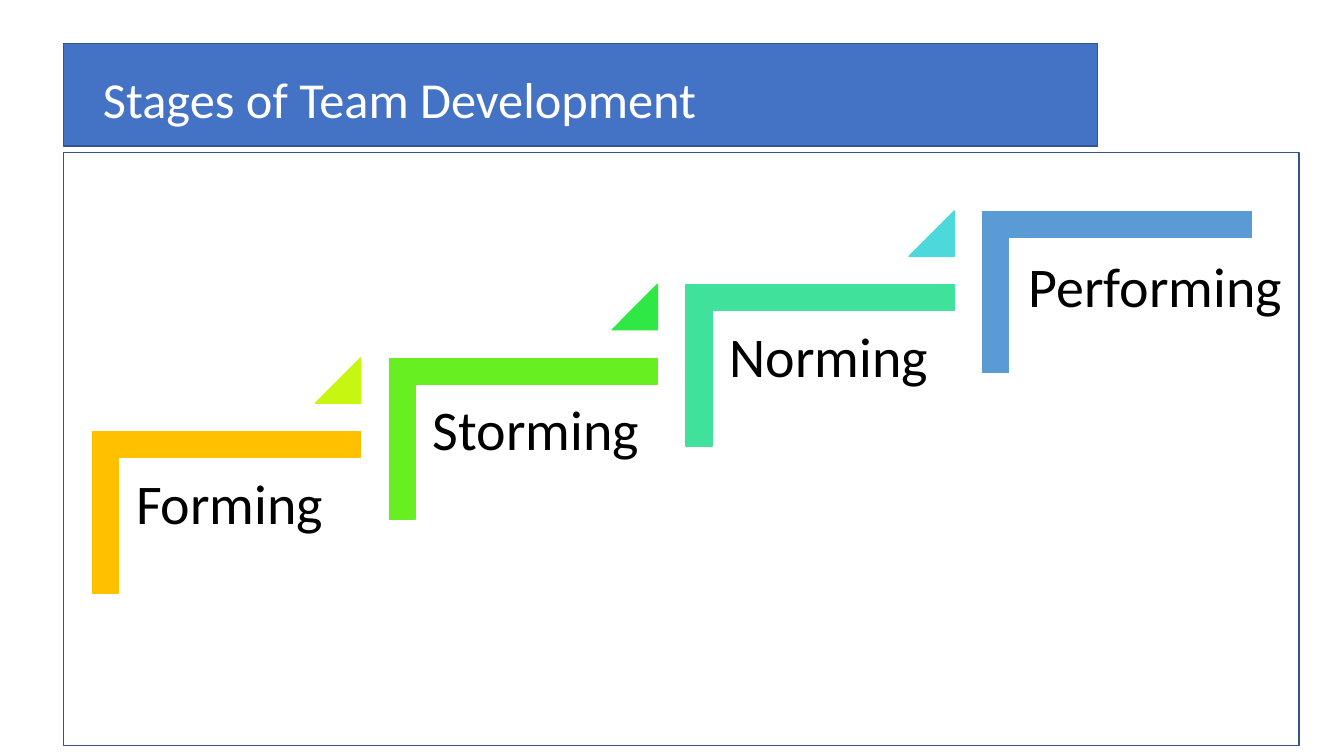
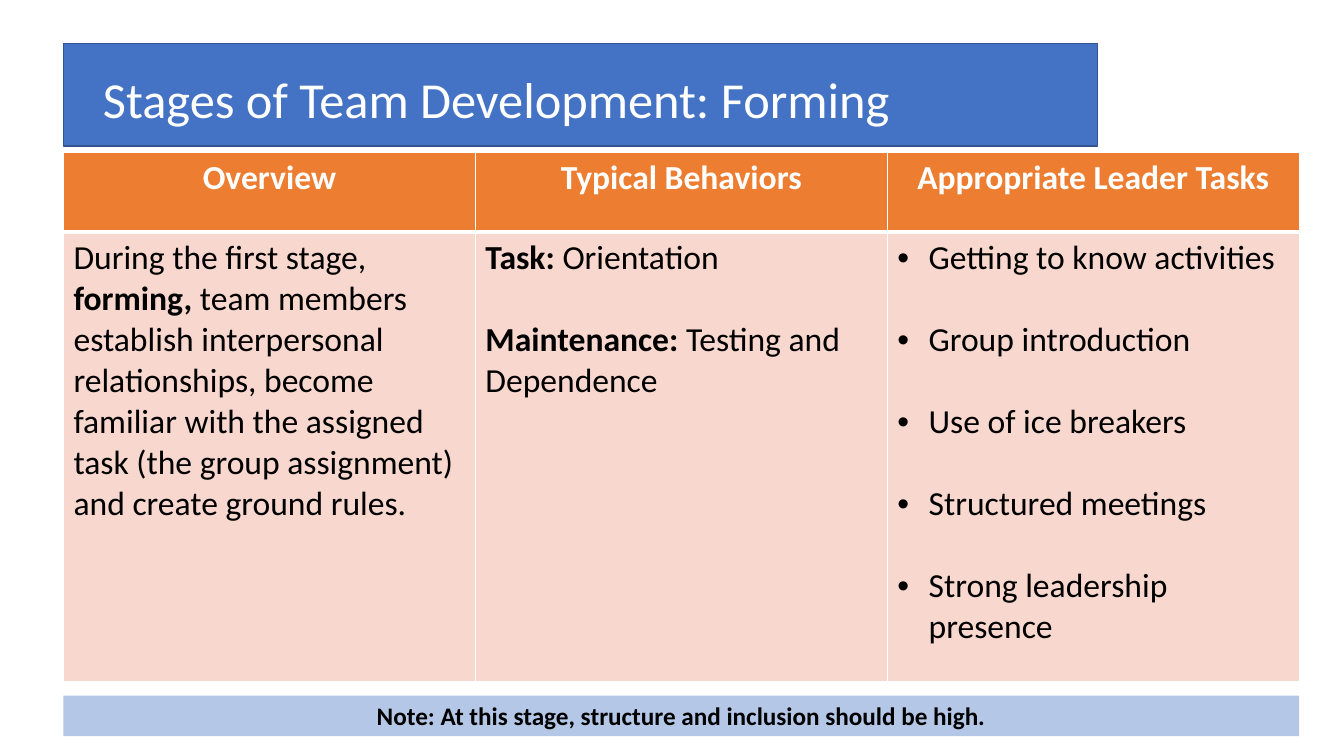
from lxml import etree
from pptx import Presentation
from pptx.dml.color import RGBColor
from pptx.enum.shapes import MSO_SHAPE
from pptx.enum.text import MSO_ANCHOR, MSO_AUTO_SIZE, PP_ALIGN
from pptx.oxml.ns import qn
from pptx.util import Cm, Pt

RECT, CORNER, TRIANGLE = MSO_SHAPE.RECTANGLE, MSO_SHAPE.CORNER, MSO_SHAPE.ISOSCELES_TRIANGLE
LEFT, CENTER = PP_ALIGN.LEFT, PP_ALIGN.CENTER
TOP, MIDDLE = MSO_ANCHOR.TOP, MSO_ANCHOR.MIDDLE
NO_FIT = MSO_AUTO_SIZE.NONE

FONT = "Calibri"
BLUE, BLUE_LINE, PALE_BLUE = "4472C4", "325491", "B4C7E7"
ORANGE, PALE_ORANGE = "ED7D31", "F8D7CE"
BLACK, WHITE = "000000", "FFFFFF"

# Shared layout, in centimetres
SLIDE_W, SLIDE_H = 33.87, 19.05
BODY_X, BODY_Y, BODY_W = 1.6, 3.84, 31.14
BAND = (BODY_X, 1.09, 26.06, 2.59)
TITLE = (2.34, 1.02, 29.21, 3.1)

STEPS_TITLE = "Stages of Team Development"
STEPS_H = 14.94
STEP_DX, STEP_DY = 7.48, -1.85
# Stage, corner colour, colour of the triangle leading to the next stage
STEPS = [
    ("Forming", "FFC000", "C7F711"),
    ("Storming", "67EF21", "30E845"),
    ("Norming", "3FE19B", "4DD8DB"),
    ("Performing", "5B9BD5", None),
]

FORMING_TITLE = "Stages of Team Development: Forming"
ROW_HEIGHTS = (2.01, 11.33)
# Each column: heading, bulleted or not, paragraphs of (text, bold) runs
COLUMNS = [
    ("Overview", False, [
        [("During the first stage, ", False), ("forming, ", True),
         ("team members establish interpersonal relationships, become familiar with "
          "the assigned task (the group assignment) and create ground rules.", False)],
    ]),
    ("Typical Behaviors", False, [
        [("Task: ", True), ("Orientation", False)],
        [("Maintenance: ", True), ("Testing and Dependence", False)],
    ]),
    ("Appropriate Leader Tasks", True, [
        [("Getting to know activities", False)],
        [("Group introduction", False)],
        [("Use of ice breakers", False)],
        [("Structured meetings", False)],
        [("Strong leadership presence", False)],
    ]),
]
PARAGRAPH_GAP = 29.3
NOTE = "Note: At this stage, structure and inclusion should be high."
NOTE_BOX = (BODY_X, 17.53, BODY_W, 1.02)


def rgb(color):
    return RGBColor.from_string(color)


def cm(*lengths):
    return [Cm(n) for n in lengths]


def add_shape(slide, kind, box, fill=None, line=None):
    sp = slide.shapes.add_shape(kind, *cm(*box))
    sp.shadow.inherit = False
    if fill:
        sp.fill.solid()
        sp.fill.fore_color.rgb = rgb(fill)
    else:
        sp.fill.background()
    if line:
        sp.line.color.rgb = rgb(line)
        sp.line.width = Pt(1)
    else:
        sp.line.fill.background()
    return sp


def write(p, runs, size, color=BLACK, align=LEFT):
    """Fill a paragraph with (text, bold) runs."""
    p.alignment = align
    for text, bold in runs:
        r = p.add_run()
        r.text = text
        r.font.name, r.font.size, r.font.bold = FONT, Pt(size), bold
        r.font.color.rgb = rgb(color)


def add_titled_slide(prs, title, body_height):
    """Add a slide with the title band and the outlined body frame."""
    slide = prs.slides.add_slide(prs.slide_layouts[5])
    sp = slide.shapes.title
    sp.left, sp.top, sp.width, sp.height = cm(*TITLE)
    tf = sp.text_frame
    tf.auto_size, tf.vertical_anchor, tf.word_wrap = NO_FIT, MIDDLE, True
    tf.paragraphs[0].line_spacing = 0.9
    write(tf.paragraphs[0], [(title, False)], 36, WHITE)
    band = add_shape(slide, RECT, BAND, BLUE, BLUE_LINE)
    sp.element.addprevious(band.element)
    add_shape(slide, RECT, (BODY_X, BODY_Y, BODY_W, body_height), line=BLUE_LINE)
    return slide


def add_label(slide, text, box, inset, spacing):
    tf = slide.shapes.add_textbox(*cm(*box)).text_frame
    tf.word_wrap, tf.vertical_anchor = True, TOP
    tf.margin_left = tf.margin_right = Cm(inset)
    tf.margin_top = tf.margin_bottom = Cm(inset if spacing < 1 else inset / 2)
    tf.paragraphs[0].line_spacing = spacing
    write(tf.paragraphs[0], [(text, False)], 40)


def add_step(slide, i, name, color, next_color):
    dx, dy = i * STEP_DX, i * STEP_DY
    corner = add_shape(slide, CORNER, (3.68 + dx, 9.53 + dy, 4.06, 6.76), color, color)
    corner.rotation = 90
    corner.adjustments[0] = corner.adjustments[1] = 0.16
    if next_color:
        add_label(slide, name, (3 + dx, 11.56 + dy, 6.1, 5.36), 0.43, 0.9)
        triangle = add_shape(slide, TRIANGLE, (7.95 + dx, 9.02 + dy, 1.14, 1.14),
                             next_color, next_color)
        triangle.adjustments[0] = 1
    else:
        add_label(slide, name, (25.68, 6.22, 7.06, 1.96), 0.25, 1)


def add_bullet(p):
    pPr = p._p.get_or_add_pPr()
    pPr.set("marL", str(Cm(0.79)))
    pPr.set("indent", str(-Cm(0.79)))
    etree.SubElement(pPr, qn("a:buFont")).set("typeface", "Arial")
    etree.SubElement(pPr, qn("a:buChar")).set("char", "•")


def format_cell(cell, fill, top, bottom):
    """Fill a cell and give it white borders of the given top and bottom widths."""
    cell.fill.solid()
    cell.fill.fore_color.rgb = rgb(fill)
    tcPr = cell._tc.get_or_add_tcPr()
    sides = [("a:lnL", 1), ("a:lnR", 1), ("a:lnT", top), ("a:lnB", bottom)]
    for n, (tag, width) in enumerate(sides):
        ln = etree.Element(qn(tag), w=str(Pt(width)))
        solid = etree.SubElement(ln, qn("a:solidFill"))
        etree.SubElement(solid, qn("a:srgbClr")).set("val", WHITE)
        tcPr.insert(n, ln)


def add_stage_table(slide):
    frame = slide.shapes.add_table(2, len(COLUMNS),
                                   *cm(BODY_X, BODY_Y, BODY_W, sum(ROW_HEIGHTS)))
    table = frame.table
    for row, height in zip(table.rows, ROW_HEIGHTS):
        row.height = Cm(height)
    for c, (heading, bulleted, paragraphs) in enumerate(COLUMNS):
        table.columns[c].width = Cm(BODY_W / len(COLUMNS))
        head, body = table.cell(0, c), table.cell(1, c)
        format_cell(head, ORANGE, 1, 3)
        format_cell(body, PALE_ORANGE, 3, 1)
        write(head.text_frame.paragraphs[0], [(heading, True)], 24, WHITE, CENTER)
        tf = body.text_frame
        for n, runs in enumerate(paragraphs):
            p = tf.add_paragraph() if n else tf.paragraphs[0]
            if bulleted:
                add_bullet(p)
            if n:
                p.space_before = Pt(PARAGRAPH_GAP)
            write(p, runs, 24)


def main():
    prs = Presentation()
    prs.slide_width, prs.slide_height = cm(SLIDE_W, SLIDE_H)

    s = add_titled_slide(prs, STEPS_TITLE, STEPS_H)
    for i, step in enumerate(STEPS):
        add_step(s, i, *step)

    s = add_titled_slide(prs, FORMING_TITLE, sum(ROW_HEIGHTS))
    add_stage_table(s)
    note = add_shape(s, RECT, NOTE_BOX, PALE_BLUE)
    note.text_frame.word_wrap = True
    write(note.text_frame.paragraphs[0], [(NOTE, True)], 18, align=CENTER)

    prs.save("out.pptx")


if __name__ == "__main__":
    main()
